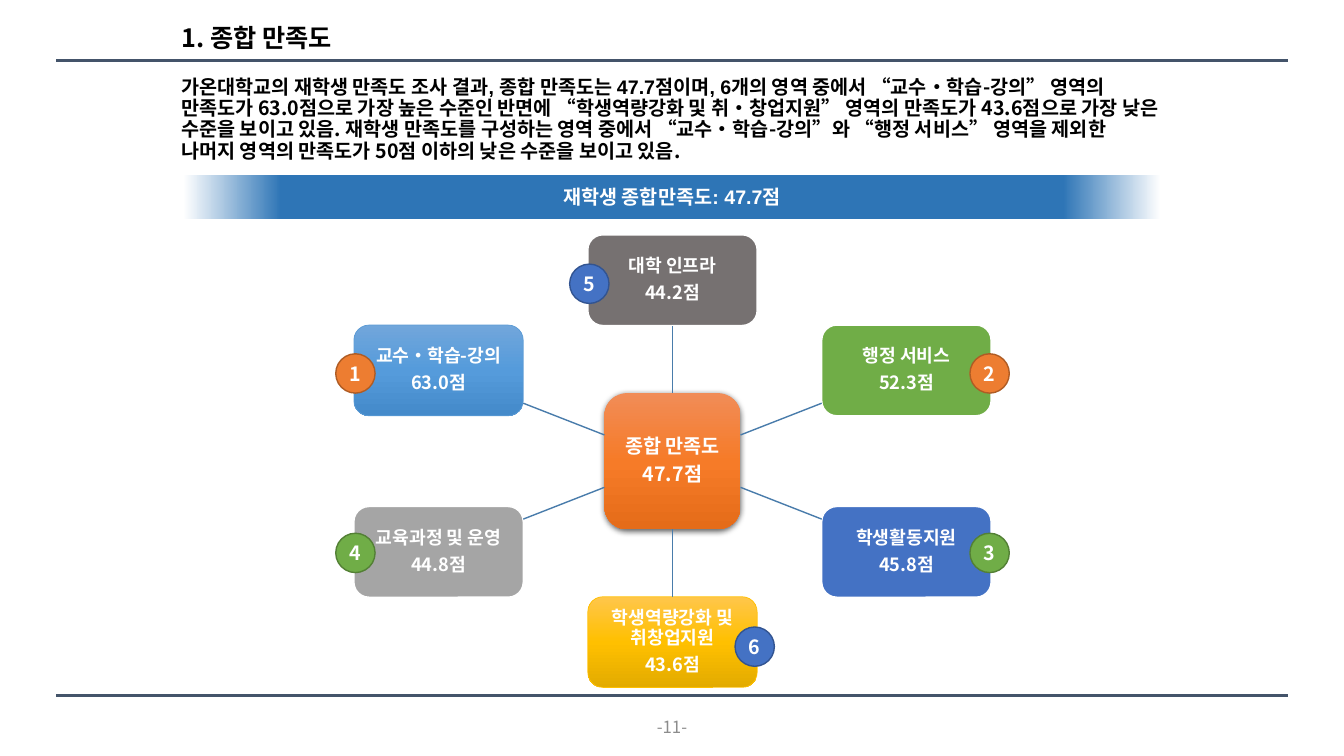
from lxml.etree import SubElement
from pptx import Presentation
from pptx.dml.color import RGBColor
from pptx.enum.shapes import MSO_CONNECTOR, MSO_SHAPE
from pptx.enum.text import MSO_ANCHOR, PP_ALIGN
from pptx.oxml import parse_xml
from pptx.oxml.ns import nsdecls, qn
from pptx.util import Inches, Pt

BLACK = RGBColor(0x00, 0x00, 0x00)
WHITE = RGBColor(0xFF, 0xFF, 0xFF)
SLATE = RGBColor(0x44, 0x54, 0x6A)
PAGE_GRAY = RGBColor(0x8C, 0x8C, 0x8C)
BANNER = RGBColor(0x2E, 0x75, 0xB6)
SPOKE = RGBColor(0x49, 0x7C, 0xAB)
DARK_GRAY = RGBColor(0x76, 0x71, 0x71)
LIGHT_GRAY = RGBColor(0xA5, 0xA5, 0xA5)
GREEN = RGBColor(0x70, 0xAD, 0x47)
GREEN_EDGE = RGBColor(0x53, 0x80, 0x35)
BLUE = RGBColor(0x44, 0x72, 0xC4)
BLUE_EDGE = RGBColor(0x32, 0x54, 0x91)
ORANGE = RGBColor(0xED, 0x7D, 0x31)
ORANGE_EDGE = RGBColor(0xAF, 0x5C, 0x24)
SKY = RGBColor(0x5B, 0x9B, 0xD5)
GOLD = RGBColor(0xFF, 0xC0, 0x00)
HUB_STOPS = [(0, RGBColor(0xF1, 0x8C, 0x57)), (50, RGBColor(0xF6, 0x7B, 0x28)),
             (100, RGBColor(0xE5, 0x6C, 0x19))]
GOLD_STOPS = [(0, RGBColor(0xFF, 0xC6, 0x4B)), (50, GOLD),
              (100, RGBColor(0xE3, 0xAB, 0x00))]
SKY_STOPS = [(0, RGBColor(0x71, 0xA6, 0xDB)), (50, RGBColor(0x55, 0x9B, 0xDB)),
             (100, RGBColor(0x44, 0x8A, 0xCA))]
BANNER_STOPS = [(0, WHITE), (10, BANNER), (90, BANNER), (100, WHITE)]

KOREAN = "Noto Sans CJK KR"
LATIN = "Arial"
CENTER_X, CENTER_Y = 6.67, 4.575
HUB = 1.35
NODE_W, NODE_H = 1.68, 0.9
BADGE = 0.39


class SlideBuilder:
    def __init__(self, prs):
        self.s = prs.slides.add_slide(prs.slide_layouts[6])

    def style_run(self, r, size, color, bold=True, font=KOREAN):
        r.font.size, r.font.bold, r.font.name = Pt(size), bold, font
        r.font.color.rgb = color
        SubElement(r._r.get_or_add_rPr(), qn("a:ea")).set("typeface", KOREAN)

    def text(self, x, y, w, h, runs, size, color=BLACK, bold=True, spacing=None,
             align=PP_ALIGN.LEFT, anchor=MSO_ANCHOR.MIDDLE, wrap=True):
        """Add a one-paragraph text box from (text, font) runs."""
        sp = self.s.shapes.add_textbox(Inches(x), Inches(y), Inches(w), Inches(h))
        tf = sp.text_frame
        tf.word_wrap, tf.vertical_anchor = wrap, anchor
        p = tf.paragraphs[0]
        p.alignment, p.line_spacing = align, spacing
        for text, font in runs:
            r = p.add_run()
            r.text = text
            self.style_run(r, size, color, bold, font)

    def gradient(self, sp, stops, angle):
        sp.fill.gradient()
        grad = sp.fill._xPr.find(qn("a:gradFill"))
        stop_xml = "".join(f'<a:gs pos="{pos * 1000}"><a:srgbClr val="{color}"/></a:gs>'
                           for pos, color in stops)
        grad.getparent().replace(grad, parse_xml(
            f'<a:gradFill {nsdecls("a")} rotWithShape="1"><a:gsLst>{stop_xml}</a:gsLst>'
            f'<a:lin ang="{angle * 60000}" scaled="0"/></a:gradFill>'))

    def shape(self, kind, x, y, w, h, text, fill, size, edge=None, edge_width=1,
              angle=90, inset=0.04, spacing=None, after=None, font=KOREAN):
        """Add a shape with centred white text; a list as fill means gradient stops."""
        sp = self.s.shapes.add_shape(kind, Inches(x), Inches(y), Inches(w), Inches(h))
        sp.shadow.inherit = False
        if isinstance(fill, list):
            self.gradient(sp, fill, angle)
        else:
            sp.fill.solid()
            sp.fill.fore_color.rgb = fill
        if edge is None:
            sp.line.fill.background()
        else:
            sp.line.color.rgb, sp.line.width = edge, Pt(edge_width)
        tf = sp.text_frame
        tf.text = text
        tf.word_wrap, tf.vertical_anchor = True, MSO_ANCHOR.MIDDLE
        tf.margin_left = tf.margin_right = Inches(inset)
        tf.margin_top = tf.margin_bottom = Inches(inset)
        for p in tf.paragraphs:
            p.alignment, p.line_spacing, p.space_after = PP_ALIGN.CENTER, spacing, after
            self.style_run(p.runs[0], size, WHITE, font=font)
        return sp

    def card(self, cx, cy, w, h, text, fill, size, edge=None, edge_width=1):
        """Add a rounded box centred on (cx, cy)."""
        return self.shape(MSO_SHAPE.ROUNDED_RECTANGLE, cx - w / 2, cy - h / 2, w, h, text,
                          fill, size, edge, edge_width, spacing=0.9, after=Pt(5))

    def badge(self, cx, cy, number, fill, edge):
        self.shape(MSO_SHAPE.OVAL, cx - BADGE / 2, cy - BADGE / 2, BADGE, BADGE,
                   str(number), fill, 14, edge, inset=0)

    def line(self, x1, y1, x2, y2, color, width):
        c = self.s.shapes.add_connector(MSO_CONNECTOR.STRAIGHT, Inches(x1), Inches(y1),
                                        Inches(x2), Inches(y2))
        c.line.color.rgb, c.line.width = color, Pt(width)
        SubElement(c._element.spPr, qn("a:effectLst"))
        return c

    def drop_shadow(self, sp):
        sp._element.spPr.find(qn("a:effectLst")).append(parse_xml(
            f'<a:outerShdw {nsdecls("a")} blurRad="57150" dist="19050" dir="5400000" '
            'algn="ctr" rotWithShape="0"><a:srgbClr val="000000">'
            '<a:alpha val="63000"/></a:srgbClr></a:outerShdw>'))


def main():
    prs = Presentation()
    prs.slide_width, prs.slide_height = Inches(13.33), Inches(7.5)
    b = SlideBuilder(prs)

    for y in (0.6, 6.9):
        b.line(0.56, y, 12.77, y, SLATE, 2)
    b.text(1.7, 0.21, 1.85, 0.37, [("1. 종합 만족도", KOREAN)], 18, spacing=0.9, wrap=False)
    b.text(6.39, 7.06, 0.55, 0.3, [("-11-", KOREAN)], 12, PAGE_GRAY, bold=False,
           align=PP_ALIGN.CENTER, wrap=False)
    b.shape(MSO_SHAPE.RECTANGLE, 1.82, 1.74, 9.69, 0.43, "재학생 종합만족도: 47.7점",
            BANNER_STOPS, 14, angle=0, font=LATIN)
    b.text(1.7, 0.72, 9.92, 0.95, [
        ("가온대학교의 재학생 만족도 조사 결과, 종합 만족도는 47.7점이며, "
         "6개의 영역 중에서 “교수", LATIN),
        ("•학습-강의” 영역의 만족도가 63.0점으로 가장 높은 수준인 반면에 "
         "“학생역량강화 및 취•창업지원” 영역의 만족도가 43.6점으로 가장 낮은 수준을 "
         "보이고 있음. 재학생 만족도를 구성하는 영역 중에서 “교수•학습-강의”와 "
         "“행정 서비스” 영역을 제외한 나머지 영역의 만족도가 50점 이하의 낮은 수준을 "
         "보이고 있음.", KOREAN)], 14, spacing=0.9, anchor=MSO_ANCHOR.TOP)

    hub = b.card(CENTER_X, CENTER_Y, HUB, HUB, "종합 만족도\n47.7점", HUB_STOPS, 14)
    b.drop_shadow(hub)

    # column and row (-1, 0, 1), label, score, fill, edge, edge width
    areas = [
        (0, -1, "대학 인프라", "44.2", DARK_GRAY, WHITE, 1),
        (1, -1, "행정 서비스", "52.3", GREEN, WHITE, 1),
        (1, 1, "학생활동지원", "45.8", BLUE, WHITE, 1),
        (0, 1, "학생역량강화 및 취창업지원", "43.6", GOLD_STOPS, GOLD, 0.5),
        (-1, 1, "교육과정 및 운영", "44.8", LIGHT_GRAY, WHITE, 1),
        (-1, -1, "교수•학습-강의", "63.0", SKY_STOPS, SKY, 0.5),
    ]
    for col, row, label, score, fill, edge, edge_width in areas:
        cx = CENTER_X + col * 2.32
        cy = CENTER_Y + row * (0.9 if col else 1.795)
        node = b.card(cx, cy, NODE_W, NODE_H, f"{label}\n{score}점", fill, 13,
                      edge, edge_width)
        if col:
            b.line(CENTER_X + col * HUB / 2, CENTER_Y + row * 0.26,
                   cx - col * NODE_W / 2, CENTER_Y + row * 0.575, SPOKE, 1)
        else:
            spoke = b.line(CENTER_X, CENTER_Y, cx, cy, SPOKE, 1)
            spoke.begin_connect(hub, 0 if row < 0 else 2)
            spoke.end_connect(node, 2 if row < 0 else 0)

    badges = [
        (3.525, 3.705, ORANGE, ORANGE_EDGE), (9.815, 3.705, ORANGE, ORANGE_EDGE),
        (9.815, 5.485, GREEN, GREEN_EDGE), (3.525, 5.485, GREEN, GREEN_EDGE),
        (5.845, 2.815, BLUE, BLUE_EDGE), (7.485, 6.415, BLUE, BLUE_EDGE),
    ]
    for number, (cx, cy, fill, edge) in enumerate(badges, 1):
        b.badge(cx, cy, number, fill, edge)

    prs.save("out.pptx")


if __name__ == "__main__":
    main()
